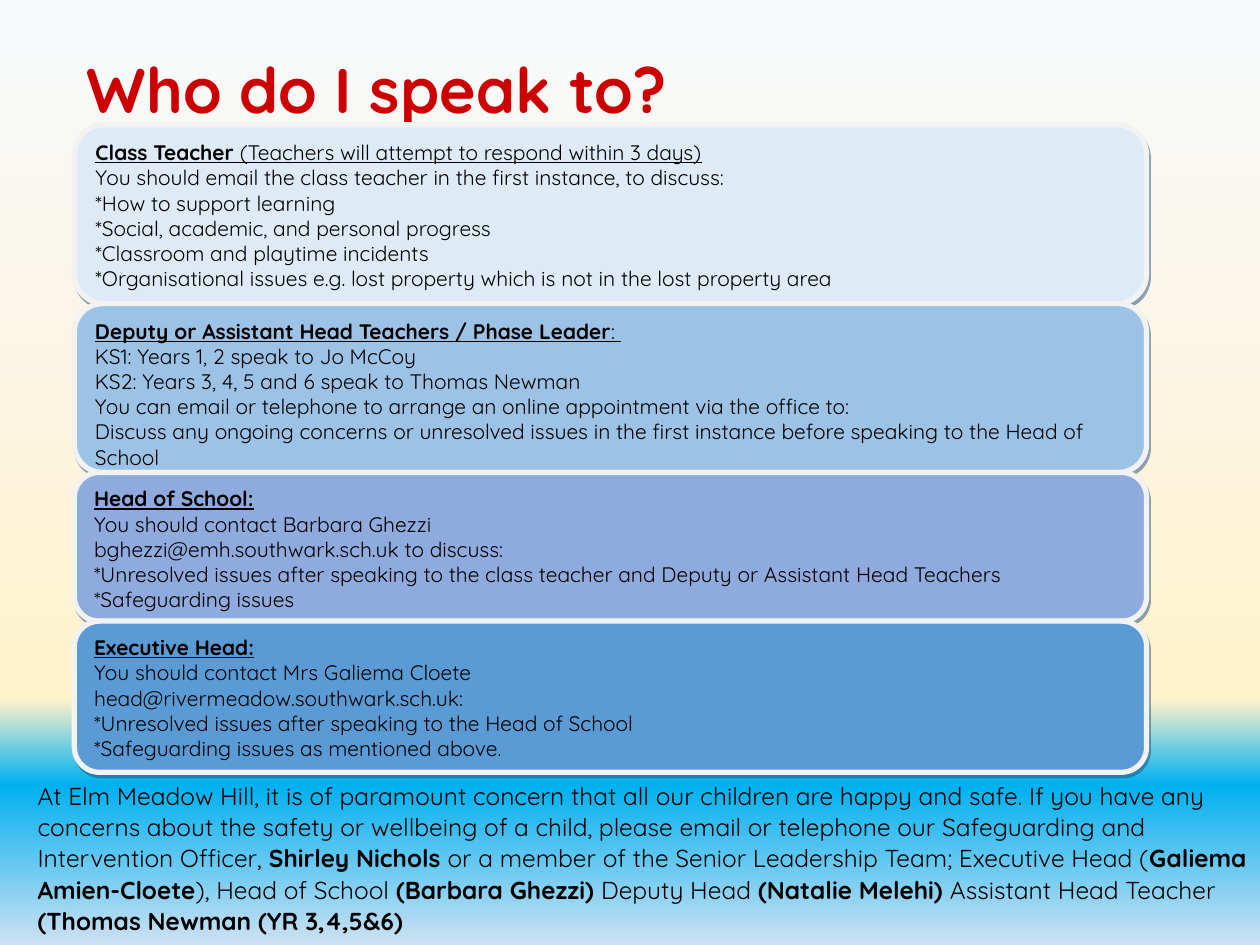
from lxml.etree import SubElement
from pptx import Presentation
from pptx.dml.color import RGBColor
from pptx.enum.shapes import MSO_SHAPE
from pptx.enum.text import MSO_ANCHOR, PP_ALIGN
from pptx.oxml import parse_xml
from pptx.oxml.ns import nsdecls, qn
from pptx.util import Inches, Pt

FONT = "Quicksand"
COLORS = {"title": "CC0000", "text": "000000", "edge": "F2F2F2", "shade": "1F4D78",
          "class": "DEEAF6", "deputy": "9CC2E5", "head": "8FAADC", "exec": "5B9BD5"}
SKY = [(0, "F7FAFD"), (74, "FFF2CC"), (83, "00B0F0"), (100, "CEE1F2")]
TITLE = "Who do I speak to?"
LEFT, TOP, WIDTH = 0.59, 0.99, 8.51

CARDS = [
    ("class", 1.42, "Class Teacher ", "(Teachers will attempt to respond within 3 days)", [
        "You should email the class teacher in the first instance, to discuss:",
        "*How to support learning",
        "*Social, academic, and personal progress",
        "*Classroom and playtime incidents",
        "*Organisational issues e.g. lost property which is not in the lost property area"]),
    ("deputy", 1.34, "Deputy or Assistant Head Teachers / Phase Leader", ": ", [
        "KS1: Years 1, 2 speak to Jo McCoy",
        "KS2: Years 3, 4, 5 and 6 speak to Thomas Newman",
        "You can email or telephone to arrange an online appointment via the office to:",
        "Discuss any ongoing concerns or unresolved issues in the first instance "
        "before speaking to the Head of School"]),
    ("head", 1.18, "Head of School:", "", [
        "You should contact Barbara Ghezzi",
        "bghezzi@emh.southwark.sch.uk to discuss:",
        "*Unresolved issues after speaking to the class teacher and Deputy or Assistant Head Teachers",
        "*Safeguarding issues"]),
    ("exec", 1.2, "Executive Head:", "", [
        "You should contact Mrs Galiema Cloete",
        "head@rivermeadow.southwark.sch.uk:",
        "*Unresolved issues after speaking to the Head of School",
        "*Safeguarding issues as mentioned above."]),
]

NOTE = [
    ("At Elm Meadow Hill, it is of paramount concern that all our children are happy and safe. "
     "If you have any concerns about the safety or wellbeing of a child, please email or "
     "telephone our Safeguarding and Intervention Officer, ", False),
    ("Shirley Nichols ", True),
    ("or a member of the Senior Leadership Team; Executive Head (", False),
    ("Galiema Amien-Cloete", True),
    ("), Head of School ", False),
    ("(Barbara Ghezzi) ", True),
    ("Deputy Head ", False),
    ("(Natalie Melehi) ", True),
    ("Assistant Head Teacher ", False),
    ("(Thomas Newman (YR 3,4,5&6)", True),
]


def rgb(name):
    return RGBColor.from_string(COLORS[name])


def style(para, size, color="text"):
    para.alignment = PP_ALIGN.LEFT
    para.font.name = FONT
    para.font.size = Pt(size)
    para.font.color.rgb = rgb(color)


def add_run(para, text, bold, line=None):
    run = para.add_run()
    run.text = text
    run.font.bold = bold
    run.font.underline = line


def add_box(slide, left, top, width, height):
    box = slide.shapes.add_textbox(*map(Inches, (left, top, width, height)))
    box.text_frame.word_wrap = True
    return box.text_frame


def paint_sky(slide):
    fill = slide.background.fill
    fill.gradient()
    fill.gradient_angle = 270
    stops = next(slide.background._cSld.iter(qn("a:gsLst")))
    for stop in list(stops):
        stops.remove(stop)
    for place, color in SKY:
        stop = SubElement(stops, qn("a:gs"), pos=str(place * 1000))
        SubElement(stop, qn("a:srgbClr"), val=color)


def add_shade(shape):
    shape._element.spPr.append(parse_xml(
        f'<a:effectLst {nsdecls("a")}><a:outerShdw blurRad="0" dist="{Pt(2.2)}" '
        f'dir="{63 * 60000}" algn="ctr" rotWithShape="0"><a:srgbClr val="{COLORS["shade"]}">'
        '<a:alpha val="50000"/></a:srgbClr></a:outerShdw></a:effectLst>'))


def add_card(slide, top, color, height, head, tail, lines):
    card = slide.shapes.add_shape(
        MSO_SHAPE.ROUNDED_RECTANGLE, *map(Inches, (LEFT, top, WIDTH, height)))
    card.fill.solid()
    card.fill.fore_color.rgb = rgb(color)
    card.line.color.rgb = rgb("edge")
    card.line.width = Pt(3)
    add_shade(card)
    frame = card.text_frame
    frame.word_wrap = True
    frame.vertical_anchor = MSO_ANCHOR.TOP
    para = frame.paragraphs[0]
    style(para, 12)
    add_run(para, head, True, True)
    if tail:
        add_run(para, tail, False, True)
    for line in lines:
        para = frame.add_paragraph()
        para.text = line
        style(para, 12)


def main():
    deck = Presentation()
    deck.slide_width, deck.slide_height = Inches(10), Inches(7.5)
    slide = deck.slides.add_slide(deck.slide_layouts[6])
    paint_sky(slide)

    frame = add_box(slide, LEFT, 0.01, 8.62, 1.45)
    frame.vertical_anchor = MSO_ANCHOR.MIDDLE
    para = frame.paragraphs[0]
    para.text = TITLE
    para.line_spacing = 0.9
    style(para, 36, "title")
    para.font.bold = True

    top = TOP
    for color, height, head, tail, lines in CARDS:
        add_card(slide, top, color, height, head, tail, lines)
        top += height

    para = add_box(slide, 0.2, top, 9.8, 1.36).paragraphs[0]
    style(para, 14)
    para.line_spacing = 1.07
    para.space_before, para.space_after = Pt(7.5), Pt(8)
    for text, bold in NOTE:
        add_run(para, text, bold)

    deck.save("out.pptx")


if __name__ == "__main__":
    main()
